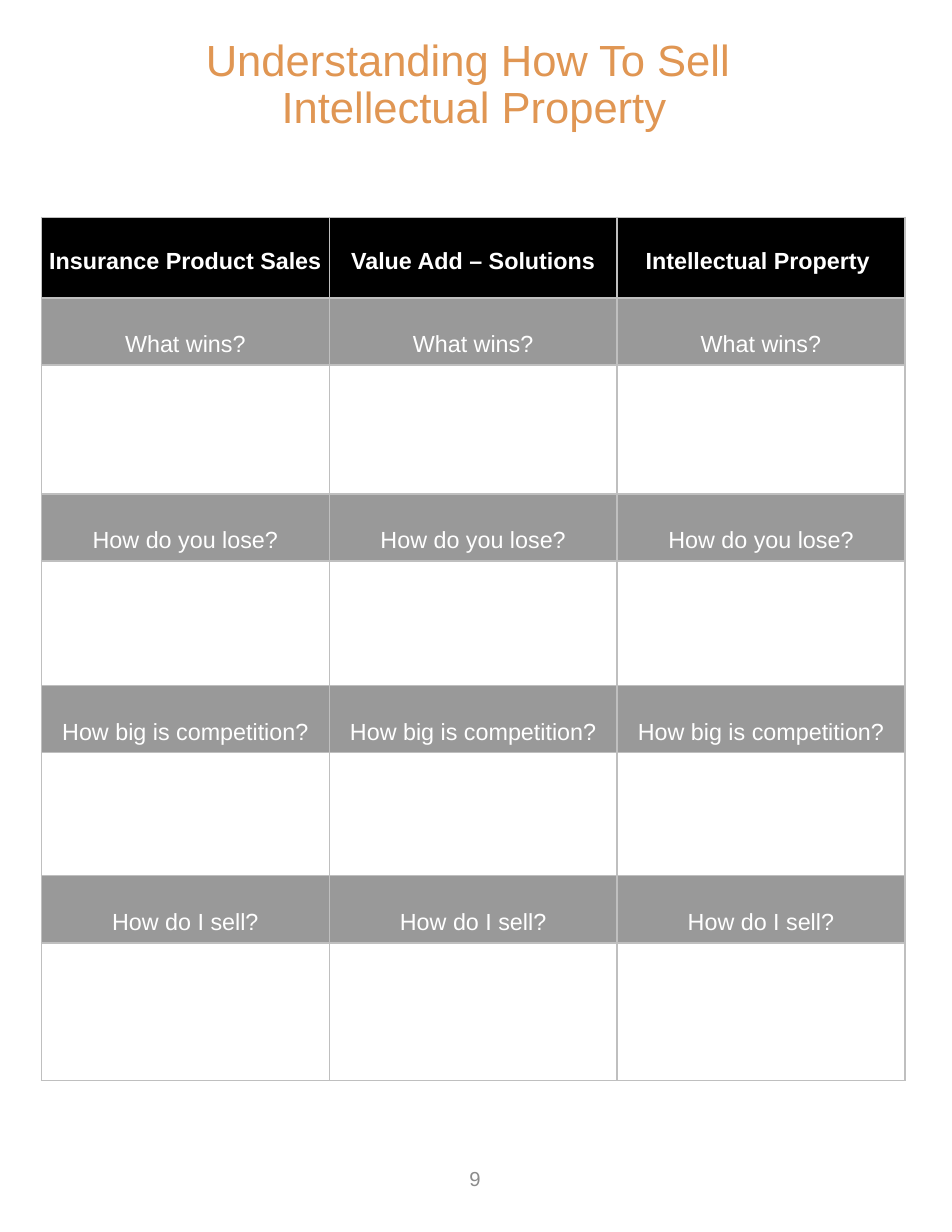
from lxml import etree
from pptx import Presentation
from pptx.dml.color import RGBColor
from pptx.enum.text import MSO_ANCHOR, MSO_AUTO_SIZE, PP_ALIGN
from pptx.oxml.ns import qn
from pptx.util import Inches, Pt

CENTER = PP_ALIGN.CENTER
TOP = MSO_ANCHOR.TOP
MIDDLE = MSO_ANCHOR.MIDDLE
NO_FIT = MSO_AUTO_SIZE.NONE

ORANGE = RGBColor(0xE0, 0x96, 0x53)
BLACK = RGBColor(0x00, 0x00, 0x00)
WHITE = RGBColor(0xFF, 0xFF, 0xFF)
GRAY = RGBColor(0x99, 0x99, 0x99)
SILVER = RGBColor(0xBF, 0xBF, 0xBF)
DIM = RGBColor(0x8C, 0x8C, 0x8C)

FONT = "Arial"
TITLE = ["Understanding How To Sell ", "Intellectual Property"]
HEADS = ["Insurance Product Sales", "Value Add – Solutions", "Intellectual Property "]
ASKS = [
    ("What wins?", 1.15),
    ("How do you lose?", 1.11),
    ("How big is competition?", 1.1),
    ("How do I sell?", 1.23),
]
HEAD_TALL = 0.72
ASK_TALL = 0.6
COL_WIDE = 2.57


def set_pads(item, side, edge):
    item.margin_left = item.margin_right = Inches(side)
    item.margin_top = item.margin_bottom = Inches(edge)


def add_line(para, text, size, color, bold=False, space=1.0):
    para.alignment = CENTER
    para.line_spacing = space
    run = para.add_run()
    run.text = text
    font = run.font
    font.name = FONT
    font.size = Pt(size)
    font.bold = bold
    font.color.rgb = color


def add_title(slide):
    title = slide.shapes.title
    title.left, title.top = Inches(0.42), Inches(0.29)
    title.width, title.height = Inches(7.62), Inches(0.95)
    frame = title.text_frame
    frame.auto_size = NO_FIT
    frame.vertical_anchor = MIDDLE
    set_pads(frame, 0.05, 0.05)
    for row, text in enumerate(TITLE):
        para = frame.add_paragraph() if row else frame.paragraphs[0]
        add_line(para, text, 28, ORANGE, space=0.9)


def set_border(cell):
    props = cell._tc.get_or_add_tcPr()
    for spot, side in enumerate(("a:lnL", "a:lnR", "a:lnT", "a:lnB")):
        line = etree.Element(qn(side), w=str(Pt(1)))
        fill = etree.SubElement(line, qn("a:solidFill"))
        etree.SubElement(fill, qn("a:srgbClr"), val=str(SILVER))
        props.insert(spot, line)


def fill_row(table, row, tall, texts, color, anchor=MIDDLE, bold=False):
    table.rows[row].height = Inches(tall)
    for col, text in enumerate(texts):
        cell = table.cell(row, col)
        set_border(cell)
        set_pads(cell, 0.05, 0.05)
        cell.vertical_anchor = anchor
        cell.fill.solid()
        cell.fill.fore_color.rgb = color
        if text:
            para = cell.text_frame.paragraphs[0]
            add_line(para, text, 15, WHITE, bold, 2.0)


def add_grid(slide):
    cols = len(HEADS)
    tall = HEAD_TALL + sum(ASK_TALL + room for _, room in ASKS)
    frame = slide.shapes.add_table(
        1 + 2 * len(ASKS), cols, Inches(0.37), Inches(1.94),
        Inches(cols * COL_WIDE), Inches(tall))
    table = frame.table
    table.first_row = table.horz_banding = False
    for col in table.columns:
        col.width = Inches(COL_WIDE)
    fill_row(table, 0, HEAD_TALL, HEADS, BLACK, TOP, True)
    for pos, (ask, room) in enumerate(ASKS):
        row = 1 + 2 * pos
        fill_row(table, row, ASK_TALL, [ask] * cols, GRAY)
        fill_row(table, row + 1, room, [""] * cols, WHITE)


def add_page(slide):
    box = slide.shapes.add_textbox(
        Inches(3.25), Inches(10.23), Inches(1.98), Inches(0.59))
    frame = box.text_frame
    frame.word_wrap = True
    frame.vertical_anchor = MIDDLE
    set_pads(frame, 0.11, 0.06)
    add_line(frame.paragraphs[0], "9", 13, DIM)


def main():
    deck = Presentation()
    deck.slide_width, deck.slide_height = Inches(8.5), Inches(11)
    slide = deck.slides.add_slide(deck.slide_layouts[5])
    add_title(slide)
    add_grid(slide)
    add_page(slide)
    deck.save("out.pptx")


if __name__ == "__main__":
    main()
